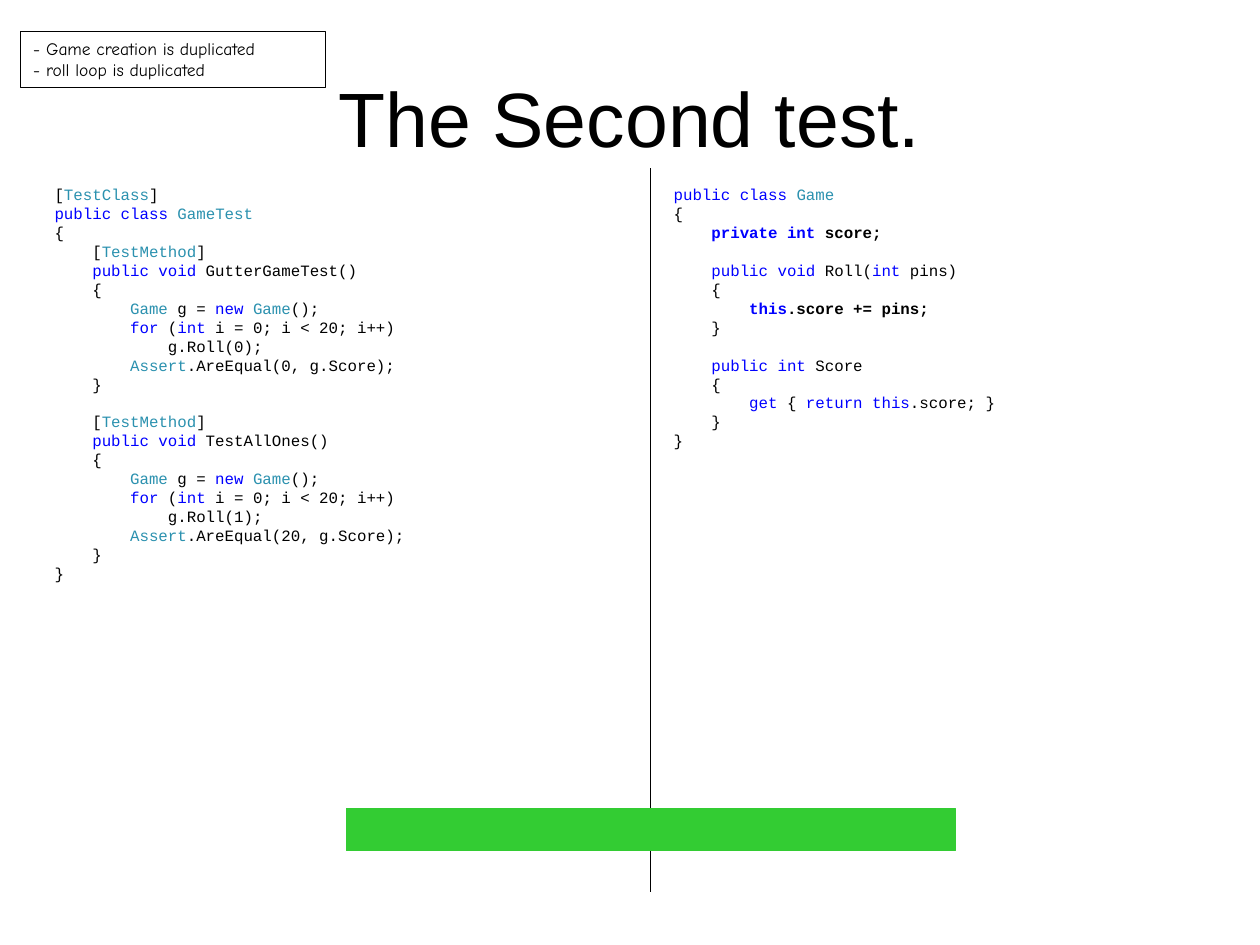
import itertools

import pptx
import pptx.dml.color
import pptx.enum.shapes
import pptx.enum.text
import pptx.oxml
import pptx.util
from pptx.util import Cm

COLORS = {"text": "000000", "keyword": "0000FF", "type": "2B91AF", "passed": "33CC33"}
KEYWORDS = {"public", "private", "class", "void", "int", "new", "for", "this", "get", "return"}
TYPES = {"TestClass", "TestMethod", "GameTest", "Game", "Assert"}

TITLE = "The Second test."
NOTES = [(0, "- Game creation is duplicated"), (0, "- roll loop is duplicated")]


def test_method(name, pins, score, *style):
    return [
        (1, "[TestMethod]", *style),
        (1, f"public void {name}()"),
        (1, "{"),
        (2, "Game g = new Game();"),
        (2, "for (int i = 0; i < 20; i++)"),
        (3, f"g.Roll({pins});"),
        (2, f"Assert.AreEqual({score}, g.Score);"),
        (1, "}"),
    ]


TEST_CODE = [
    (0, "[TestClass]"),
    (0, "public class GameTest"),
    (0, "{"),
    *test_method("GutterGameTest", 0, 0),
    *test_method("TestAllOnes", 1, 20, "gap"),
    (0, "}"),
]
GAME_CODE = [
    (0, "public class Game"),
    (0, "{"),
    (1, "private int score;", "bold"),
    (1, "public void Roll(int pins)", "gap"),
    (1, "{"),
    (2, "this.score += pins;", "bold"),
    (1, "}"),
    (1, "public int Score", "gap"),
    (1, "{"),
    (2, "get { return this.score; }"),
    (1, "}"),
    (0, "}"),
]

CODE_LINE = pptx.util.Pt(10.83)
CODE_INDENT = pptx.util.Pt(21.6)
CODE_TOP, CODE_WIDTH = Cm(3.6), Cm(11.23)
CODE_PANELS = [(Cm(0.85), Cm(8.33), TEST_CODE), (Cm(13.33), Cm(5.64), GAME_CODE)]
DIVIDER_X, DIVIDER_TOP, DIVIDER_BOTTOM = Cm(13.12), Cm(3.39), Cm(17.99)
BAR_TOP, BAR_WIDTH, BAR_HEIGHT = Cm(16.3), Cm(12.28), Cm(0.85)


def rgb(name):
    return pptx.dml.color.RGBColor.from_string(COLORS[name])


def token_color(token):
    return "keyword" if token in KEYWORDS else "type" if token in TYPES else "text"


def colored_parts(text):
    tokens = ["".join(group) for _, group in itertools.groupby(text, str.isalnum)]
    return [(color, "".join(group)) for color, group in itertools.groupby(tokens, token_color)]


def write_text(frame, lines, font, size, align="LEFT", code=False):
    frame.word_wrap = True
    for index, (level, text, *style) in enumerate(lines):
        paragraph = frame.paragraphs[0] if index == 0 else frame.add_paragraph()
        paragraph.alignment = getattr(pptx.enum.text.PP_ALIGN, align)
        if code:
            paragraph.line_spacing = CODE_LINE
            properties = paragraph._p.get_or_add_pPr()
            properties.set("marL", str(int(level * CODE_INDENT)))
            properties.set("indent", "0")
        if "gap" in style:
            paragraph.space_before = CODE_LINE
        for color, part in colored_parts(text) if code else [("text", text)]:
            run = paragraph.add_run()
            run.text = part
            run.font.name = font
            run.font.size = pptx.util.Pt(size)
            run.font.bold = "bold" in style
            run.font.color.rgb = rgb(color)


def add_rectangle(slide, left, top, width, height, line, fill=None):
    shape = slide.shapes.add_shape(
        pptx.enum.shapes.MSO_SHAPE.RECTANGLE, left, top, width, height)
    shape.shadow.inherit = False
    if fill:
        shape.fill.solid()
        shape.fill.fore_color.rgb = rgb(fill)
    else:
        shape.fill.background()
    shape.line.color.rgb = rgb(line)
    shape.line.width = pptx.util.Pt(0.75)
    return shape


def add_divider(slide):
    divider = slide.shapes.add_connector(
        pptx.enum.shapes.MSO_CONNECTOR.STRAIGHT,
        DIVIDER_X, DIVIDER_TOP, DIVIDER_X, DIVIDER_BOTTOM)
    divider.line.color.rgb = rgb("text")
    divider.line.width = pptx.util.Pt(0.75)
    namespace = pptx.oxml.ns.nsdecls("a")
    divider._element.spPr.append(pptx.oxml.parse_xml(f"<a:effectLst {namespace}/>"))


def main():
    presentation = pptx.Presentation()
    presentation.slide_width, presentation.slide_height = Cm(25.4), Cm(19.05)
    slide = presentation.slides.add_slide(presentation.slide_layouts.get_by_name("Title Only"))

    title = slide.shapes.title
    title.left, title.top, title.width, title.height = Cm(1.27), Cm(0.76), Cm(22.86), Cm(3.18)
    title.text_frame.vertical_anchor = pptx.enum.text.MSO_ANCHOR.MIDDLE
    write_text(title.text_frame, [(0, TITLE)], "Arial", 44, align="CENTER")

    for left, height, lines in CODE_PANELS:
        panel = slide.shapes.add_textbox(left, CODE_TOP, CODE_WIDTH, height)
        write_text(panel.text_frame, lines, "Courier New", 9, code=True)

    add_divider(slide)
    add_rectangle(slide, DIVIDER_X - BAR_WIDTH // 2, BAR_TOP, BAR_WIDTH, BAR_HEIGHT,
                  line="passed", fill="passed")

    note = add_rectangle(slide, Cm(0.42), Cm(0.64), Cm(6.15), Cm(1.12), line="text")
    write_text(note.text_frame, NOTES, "Comic Neue", 10)

    presentation.save("out.pptx")


if __name__ == "__main__":
    main()
